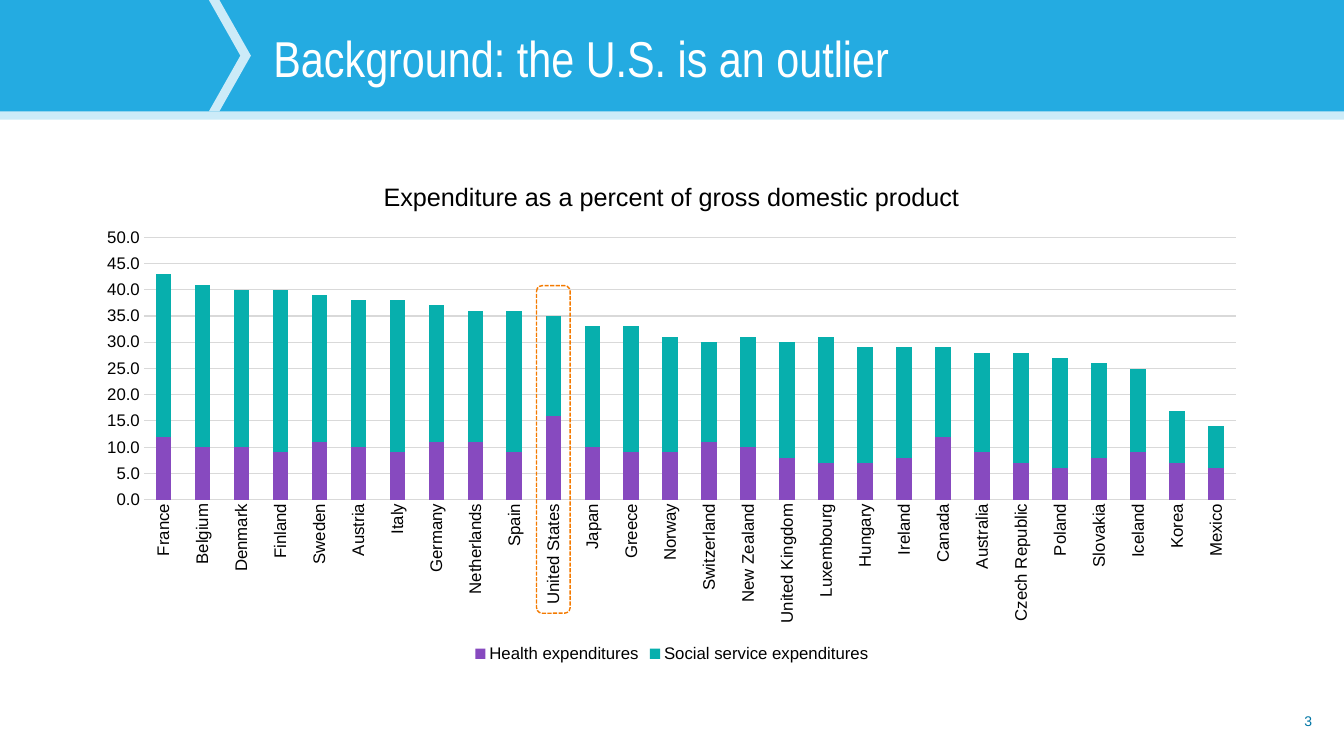
from lxml import etree
from pptx import Presentation
from pptx.chart.data import CategoryChartData
from pptx.dml.color import RGBColor
from pptx.enum.chart import XL_CHART_TYPE, XL_LEGEND_POSITION, XL_TICK_MARK
from pptx.enum.dml import MSO_LINE
from pptx.enum.shapes import MSO_SHAPE
from pptx.enum.text import MSO_ANCHOR, PP_ALIGN
from pptx.oxml import parse_xml
from pptx.oxml.ns import nsdecls, qn
from pptx.util import Pt

EMU_PER_PX = 9525
BLUE, PALE_BLUE, DARK_BLUE = "009DDC", "CCEBF8", "0076A5"
PURPLE, TEAL, ORANGE, GRAY = "874ABF", "07AFAD", "F47A00", "D9D9D9"
BLACK, WHITE = "000000", "FFFFFF"

# Country, health expenditures, social service expenditures
EXPENDITURES = [
    ("France", 12, 31), ("Belgium", 10, 31), ("Denmark", 10, 30),
    ("Finland", 9, 31), ("Sweden", 11, 28), ("Austria", 10, 28),
    ("Italy", 9, 29), ("Germany", 11, 26), ("Netherlands", 11, 25),
    ("Spain", 9, 27), ("United States", 16, 19), ("Japan", 10, 23),
    ("Greece", 9, 24), ("Norway", 9, 22), ("Switzerland", 11, 19),
    ("New Zealand", 10, 21), ("United Kingdom", 8, 22), ("Luxembourg", 7, 24),
    ("Hungary", 7, 22), ("Ireland", 8, 21), ("Canada", 12, 17),
    ("Australia", 9, 19), ("Czech Republic", 7, 21), ("Poland", 6, 21),
    ("Slovakia", 8, 18), ("Iceland", 9, 16), ("Korea", 7, 10), ("Mexico", 6, 8),
]


def px(*lengths):
    return [length * EMU_PER_PX for length in lengths]


def color(hex_text):
    return RGBColor.from_string(hex_text)


def style_font(font, size, hex_text, name="Arial"):
    font.size, font.name, font.bold = Pt(size), name, False
    font.color.rgb = color(hex_text)


def style_line(line, hex_text, width):
    line.color.rgb = color(hex_text)
    line.width = Pt(width)


def add_filled_shape(slide, kind, box, fill, opacity=100):
    shape = slide.shapes.add_shape(kind, *px(*box))
    shape.shadow.inherit = False
    shape.line.fill.background()
    shape.fill.solid()
    shape.fill.fore_color.rgb = color(fill)
    if opacity < 100:
        fill_color = shape.fill._xPr.find(qn("a:solidFill"))[0]
        etree.SubElement(fill_color, qn("a:alpha"), val=str(opacity * 1000))
    return shape


def add_text(slide, box, text, size, hex_text, font_name, align, spacing=1.0):
    text_frame = slide.shapes.add_textbox(*px(*box)).text_frame
    text_frame.word_wrap = True
    text_frame.vertical_anchor = MSO_ANCHOR.MIDDLE
    text_frame.text = text
    paragraph = text_frame.paragraphs[0]
    paragraph.alignment = align
    paragraph.line_spacing = spacing
    style_font(paragraph.runs[0].font, size, hex_text, font_name)


def add_header(slide, box, title):
    left, top, width, height = box
    add_filled_shape(slide, MSO_SHAPE.RECTANGLE, (left, top, width, height + 8), BLUE, 20)
    add_filled_shape(slide, MSO_SHAPE.RECTANGLE, box, BLUE, 82)
    chevron = add_filled_shape(
        slide, MSO_SHAPE.CHEVRON, (left + 199, top, 40, height), PALE_BLUE)
    chevron.adjustments[0] = 0.75
    add_text(slide, (left + 251, top + 6, width - 258, height - 2), title,
             36, WHITE, "Arial Narrow", PP_ALIGN.LEFT, 0.9)


def set_layout(element, index, chart_box, inner=False, **lengths):
    """Place a chart part by px lengths measured from the chart's corner."""
    for old in element.findall(qn("c:layout")):
        element.remove(old)
    width, height = chart_box[2:]
    totals = {"x": width, "w": width, "y": height, "h": height}
    target = '<c:layoutTarget val="inner"/>' if inner else ""
    modes = "".join(f'<c:{key}Mode val="edge"/>' for key in "xy")
    values = "".join(f'<c:{key} val="{length / totals[key]}"/>'
                     for key, length in lengths.items())
    element.insert(index, parse_xml(
        f'<c:layout {nsdecls("c")}><c:manualLayout>{target}{modes}{values}'
        "</c:manualLayout></c:layout>"))


def style_axes(chart):
    category_axis, value_axis = chart.category_axis, chart.value_axis
    for axis in (category_axis, value_axis):
        axis.major_tick_mark = axis.minor_tick_mark = XL_TICK_MARK.NONE
        style_font(axis.tick_labels.font, 12, BLACK)
    style_line(category_axis.format.line, GRAY, 0.75)
    label_body = category_axis._element.find(qn("c:txPr")).find(qn("a:bodyPr"))
    label_body.set("rot", "-5400000")
    label_body.set("vert", "horz")

    value_axis.minimum_scale, value_axis.maximum_scale = 0, 50
    value_axis.major_unit = 5
    value_axis.format.line.fill.background()
    value_axis.tick_labels.number_format = "0.0"
    value_axis.tick_labels.number_format_is_linked = False
    style_line(value_axis.major_gridlines.format.line, GRAY, 0.75)


def add_expenditure_chart(slide, box):
    countries, health, social = zip(*EXPENDITURES)
    data = CategoryChartData(number_format="0.0")
    data.categories = countries
    data.add_series("Health expenditures", health)
    data.add_series("Social service expenditures", social)
    chart = slide.shapes.add_chart(XL_CHART_TYPE.COLUMN_STACKED, *px(*box), data).chart
    style_font(chart.font, 10, BLACK)

    chart.has_title = True
    title_frame = chart.chart_title.text_frame
    title_frame.text = "Expenditure as a percent of gross domestic product"
    style_font(title_frame.paragraphs[0].runs[0].font, 18, BLACK)
    set_layout(chart.chart_title._element, 1, box, x=281, y=15)

    chart.has_legend = True
    chart.legend.position = XL_LEGEND_POSITION.BOTTOM
    chart.legend.include_in_layout = False
    style_font(chart.legend.font, 12, BLACK)

    style_axes(chart)
    plot = chart.plots[0]
    plot.gap_width, plot.overlap = 150, 100
    plot.vary_by_categories = False
    for series, fill in zip(plot.series, (PURPLE, TEAL)):
        series.format.fill.solid()
        series.format.fill.fore_color.rgb = color(fill)
    plot_area = chart._chartSpace.chart.plotArea
    set_layout(plot_area, 0, box, inner=True, x=57, y=74, w=1040, h=250)


def add_highlight(slide, box):
    outline = slide.shapes.add_shape(MSO_SHAPE.ROUNDED_RECTANGLE, *px(*box))
    outline.shadow.inherit = False
    outline.fill.background()
    style_line(outline.line, ORANGE, 1)
    outline.line.dash_style = MSO_LINE.SQUARE_DOT


def build_slide(presentation):
    slide = presentation.slides.add_slide(presentation.slide_layouts[6])
    add_header(slide, (0, 0, 1280, 106), "Background: the U.S. is an outlier")
    add_text(slide, (971, 668, 288, 38), "3", 10, DARK_BLUE, "Arial", PP_ALIGN.RIGHT)
    add_expenditure_chart(slide, (80, 152, 1120, 483))
    add_highlight(slide, (511, 272, 32, 312))


def main():
    presentation = Presentation()
    presentation.slide_width, presentation.slide_height = px(1280, 720)
    build_slide(presentation)
    presentation.save("out.pptx")


if __name__ == "__main__":
    main()
